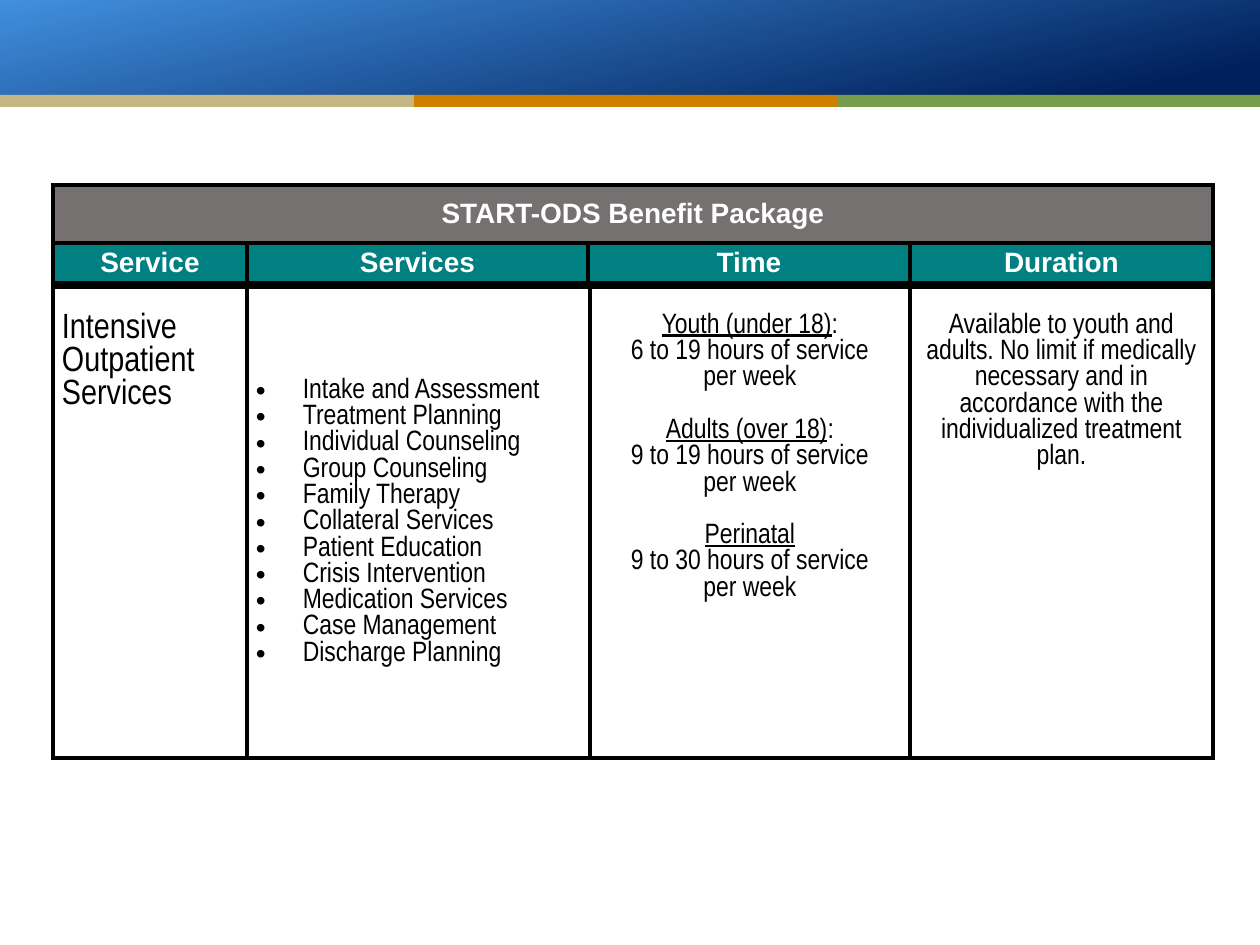
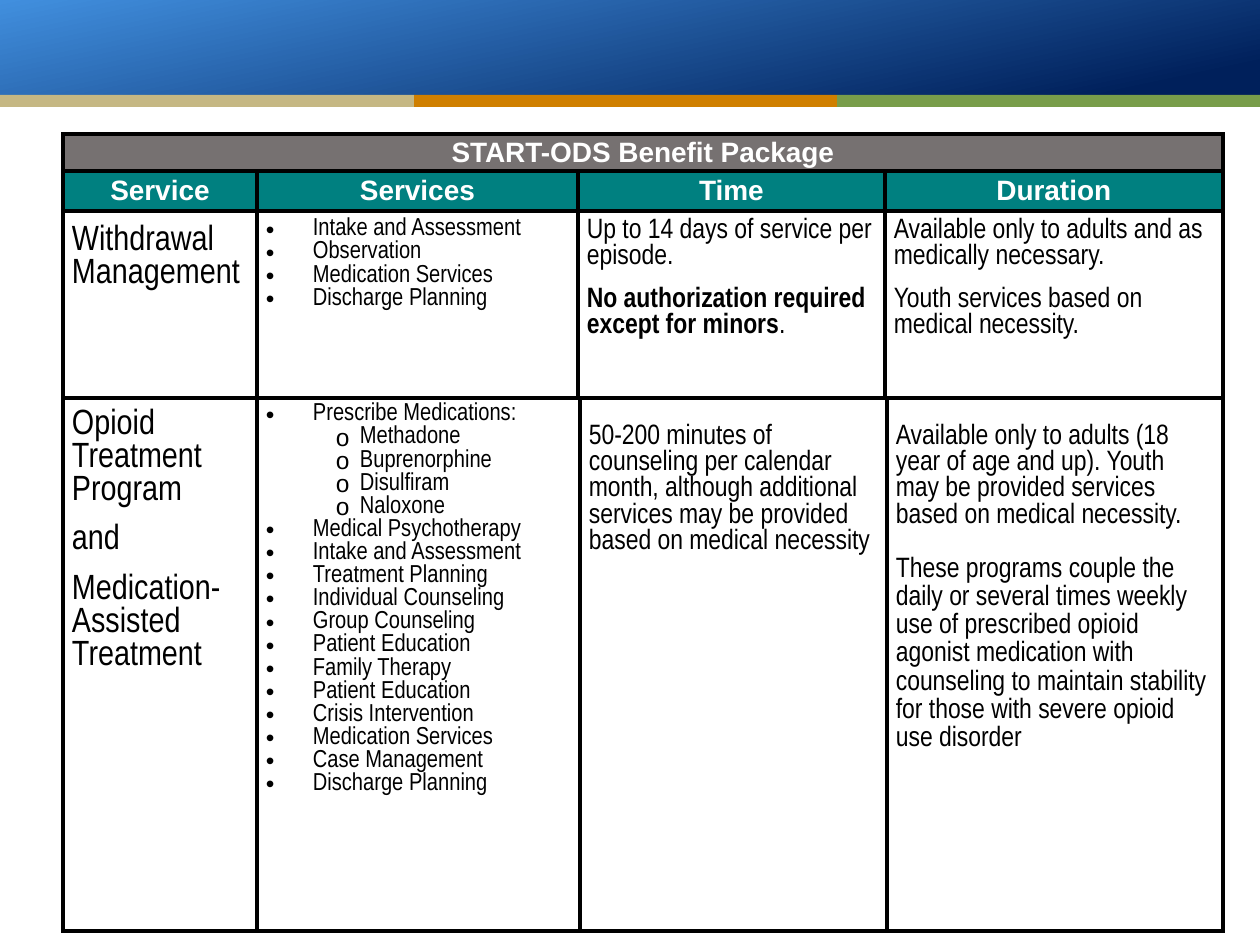
"""Build the two START-ODS benefit package slides."""
from dataclasses import dataclass, replace

from lxml.etree import SubElement
from pptx import Presentation
from pptx.dml.color import RGBColor
from pptx.enum.shapes import MSO_SHAPE
from pptx.enum.text import MSO_ANCHOR, PP_ALIGN
from pptx.oxml.ns import qn
from pptx.util import Pt

EMU_PER_PX = 914400 / 126


def px(length: int) -> int:
    return round(length * EMU_PER_PX)


@dataclass(frozen=True)
class Theme:
    heading_font: str = "Arial"
    body_font: str = "Arial Narrow"
    navy: str = "00205B"
    sky: str = "418FDE"
    sand: str = "C5B783"
    orange: str = "CF7F00"
    green: str = "789D4A"
    gray: str = "767171"
    teal: str = "008080"
    white: str = "FFFFFF"
    black: str = "000000"
    service_size: int = 20
    text_size: int = 16
    list_size: int = 14
    border_width: float = 2.25


THEME = Theme()


@dataclass(frozen=True)
class Strip:
    left: int
    width: int
    color: str


@dataclass(frozen=True)
class Bullet:
    character: str
    margin: int
    hanging: int


@dataclass(frozen=True)
class Line:
    text: str
    size: int = THEME.text_size
    font: str = THEME.body_font
    color: str = THEME.black
    bold: bool = False
    underline: bool = False
    tail: str = ""
    centered: bool = False
    before: float = 0
    spacing: float | None = None
    bullet: Bullet | None = None


@dataclass(frozen=True)
class Cell:
    lines: list[Line]
    top_margin: int = 0
    fill: str | None = None
    middle: bool = False


@dataclass(frozen=True)
class Grid:
    left: int
    top: int
    columns: list[int]
    rows: list[int]
    cells: list[list[Cell]]


STRIPS = [
    Strip(0, 414, THEME.sand),
    Strip(414, 423, THEME.orange),
    Strip(837, 423, THEME.green),
]
DOT = Bullet("•", 47, 47)
CIRCLE = Bullet("o", 94, 24)
HEADINGS = ["Service", "Services", "Time", "Duration"]


def bullets(*items: str, size: int = THEME.list_size, bullet: Bullet = DOT) -> list[Line]:
    return [Line(item, size=size, bullet=bullet) for item in items]


def service_name(*parts: str) -> list[Line]:
    return [Line(part, size=THEME.service_size, before=9.4 if index else 0)
            for index, part in enumerate(parts)]


def time_group(audience: str, tail: str, hours: str, before: float = 15) -> list[Line]:
    return [
        Line(audience, underline=True, tail=tail, centered=True, before=before),
        Line(f"{hours} hours of service", centered=True),
        Line("per week", centered=True),
    ]


def header_grid(left: int, top: int, columns: list[int], title_height: int) -> Grid:
    def heading(text: str, fill: str) -> Cell:
        line = Line(text, font=THEME.heading_font, color=THEME.white, bold=True, centered=True)
        return Cell([line], fill=fill, middle=True)

    title_row = [heading("START-ODS Benefit Package", THEME.gray)]
    heading_row = [heading(text, THEME.teal) for text in HEADINGS]
    return Grid(left, top, columns, [title_height, 40], [title_row, heading_row])


def add_run(paragraph, text: str, *, font: str, size: int, color: str,
            bold: bool = False, underline: bool = False) -> None:
    run = paragraph.add_run()
    run.text = text
    run.font.name = font
    run.font.size = Pt(size)
    run.font.bold = bold
    run.font.underline = underline
    run.font.color.rgb = RGBColor.from_string(color)


def set_bullet(paragraph, bullet: Bullet) -> None:
    properties = paragraph._p.get_or_add_pPr()
    properties.set("marL", str(px(bullet.margin)))
    properties.set("indent", str(-px(bullet.hanging)))
    SubElement(properties, qn("a:buFont")).set("typeface", THEME.heading_font)
    SubElement(properties, qn("a:buChar")).set("char", bullet.character)


def write_line(paragraph, line: Line) -> None:
    if line.bullet:
        set_bullet(paragraph, line.bullet)
    paragraph.alignment = PP_ALIGN.CENTER if line.centered else PP_ALIGN.LEFT
    if line.before:
        paragraph.space_before = Pt(line.before)
    if line.spacing:
        paragraph.line_spacing = line.spacing
    style = {"font": line.font, "size": line.size, "color": line.color}
    add_run(paragraph, line.text, bold=line.bold, underline=line.underline, **style)
    if line.tail:
        add_run(paragraph, line.tail, **style)


def set_borders(table_cell) -> None:
    properties = table_cell._tc.get_or_add_tcPr()
    for side in ("lnL", "lnR", "lnT", "lnB"):
        border = SubElement(properties, qn(f"a:{side}"), w=str(Pt(THEME.border_width)))
        fill = SubElement(border, qn("a:solidFill"))
        SubElement(fill, qn("a:srgbClr"), val=THEME.black)


def fill_cell(table_cell, cell: Cell) -> None:
    table_cell.margin_top = px(cell.top_margin)
    table_cell.vertical_anchor = MSO_ANCHOR.MIDDLE if cell.middle else MSO_ANCHOR.TOP
    if cell.fill:
        table_cell.fill.solid()
        table_cell.fill.fore_color.rgb = RGBColor.from_string(cell.fill)
    frame = table_cell.text_frame
    for index, line in enumerate(cell.lines):
        write_line(frame.add_paragraph() if index else frame.paragraphs[0], line)


def add_grid(slide, grid: Grid) -> None:
    table = slide.shapes.add_table(
        len(grid.rows), len(grid.columns), px(grid.left), px(grid.top),
        px(sum(grid.columns)), px(sum(grid.rows))).table
    table.first_row = table.horz_banding = False
    for column, width in zip(table.columns, grid.columns):
        column.width = px(width)
    for row, height in zip(table.rows, grid.rows):
        row.height = px(height)
    for table_cell in table.iter_cells():
        table_cell.margin_left = table_cell.margin_right = px(9)
        table_cell.margin_top = table_cell.margin_bottom = 0
        set_borders(table_cell)
        table_cell.fill.background()
    for row_index, cells in enumerate(grid.cells):
        if len(cells) == 1:
            table.cell(row_index, 0).merge(table.cell(row_index, len(grid.columns) - 1))
        for column_index, cell in enumerate(cells):
            fill_cell(table.cell(row_index, column_index), cell)


def add_bar(slide, left: int, top: int, width: int, height: int):
    shape = slide.shapes.add_shape(
        MSO_SHAPE.RECTANGLE, px(left), px(top), px(width), px(height))
    shape.shadow.inherit = False
    shape.line.fill.background()
    return shape


def add_banner(slide) -> None:
    fill = add_bar(slide, 0, 0, 1260, 97).fill
    fill.gradient()
    fill.gradient_angle = 102
    for stop, position, color in zip(fill.gradient_stops, (0.09, 1), (THEME.navy, THEME.sky)):
        stop.position = position
        stop.color.rgb = RGBColor.from_string(color)
    for strip in STRIPS:
        shape = add_bar(slide, strip.left, 95, strip.width, 12)
        shape.fill.solid()
        shape.fill.fore_color.rgb = RGBColor.from_string(strip.color)


def intensive_grids() -> list[Grid]:
    services = bullets(
        "Intake and Assessment", "Treatment Planning", "Individual Counseling",
        "Group Counseling", "Family Therapy", "Collateral Services", "Patient Education",
        "Crisis Intervention", "Medication Services", "Case Management",
        "Discharge Planning", size=THEME.text_size)
    times = [
        *time_group("Youth (under 18)", ":", "6 to 19", before=0),
        *time_group("Adults (over 18)", ":", "9 to 19"),
        *time_group("Perinatal", "", "9 to 30"),
    ]
    duration = Line("Available to youth and adults. No limit if medically necessary and in "
                    "accordance with the individualized treatment plan.", centered=True)
    body = [
        Cell(service_name("Intensive Outpatient Services"), 26),
        Cell(services, middle=True),
        Cell(times, 26),
        Cell([duration], 26),
    ]
    return [
        header_grid(53, 185, [194, 341, 322, 303], 58),
        Grid(53, 287, [194, 343, 320, 303], [471], [body]),
    ]


def treatment_grids() -> list[Grid]:
    withdrawal = [
        Cell(service_name("Withdrawal Management"), 33),
        Cell(bullets("Intake and Assessment", "Observation", "Medication Services",
                     "Discharge Planning"), 26),
        Cell([Line("Up to 14 days of service per episode."),
              Line("No authorization required except for minors", bold=True, tail=".",
                   before=9.4)], 26),
        Cell([Line("Available only to adults and as medically necessary."),
              Line("Youth services based on medical necessity.", before=9.4)], 26),
    ]
    medications = bullets("Methadone", "Buprenorphine", "Disulfiram", "Naloxone", bullet=CIRCLE)
    services = bullets(
        "Medical Psychotherapy", "Intake and Assessment", "Treatment Planning",
        "Individual Counseling", "Group Counseling", "Patient Education", "Family Therapy",
        "Patient Education", "Crisis Intervention", "Medication Services",
        "Case Management", "Discharge Planning")
    programs = Line("These programs couple the daily or several times weekly use of prescribed "
                    "opioid agonist medication with counseling to maintain stability for those "
                    "with severe opioid use disorder")
    opioid = [
        Cell(service_name("Opioid Treatment Program", "and",
                          "Medication- Assisted Treatment"), 11),
        Cell([*bullets("Prescribe Medications:"), *medications, *services], 5),
        Cell([Line("50-200 minutes of counseling per calendar month, although additional "
                   "services may be provided based on medical necessity")], 26),
        Cell([Line("Available only to adults (18 year of age and up). Youth may be provided "
                   "services based on medical necessity."),
              replace(programs, before=15, spacing=1.07)], 26),
    ]
    columns = [194, 321, 307, 338]
    return [
        Grid(63, 192, columns, [206], [withdrawal]),
        header_grid(63, 134, columns, 37),
        Grid(63, 398, [194, 323, 307, 336], [533], [opioid]),
    ]


def main() -> None:
    presentation = Presentation()
    presentation.slide_width, presentation.slide_height = px(1260), px(945)
    for grids in (intensive_grids(), treatment_grids()):
        slide = presentation.slides.add_slide(presentation.slide_layouts[6])
        add_banner(slide)
        for grid in grids:
            add_grid(slide, grid)
    presentation.save("out.pptx")


if __name__ == "__main__":
    main()
